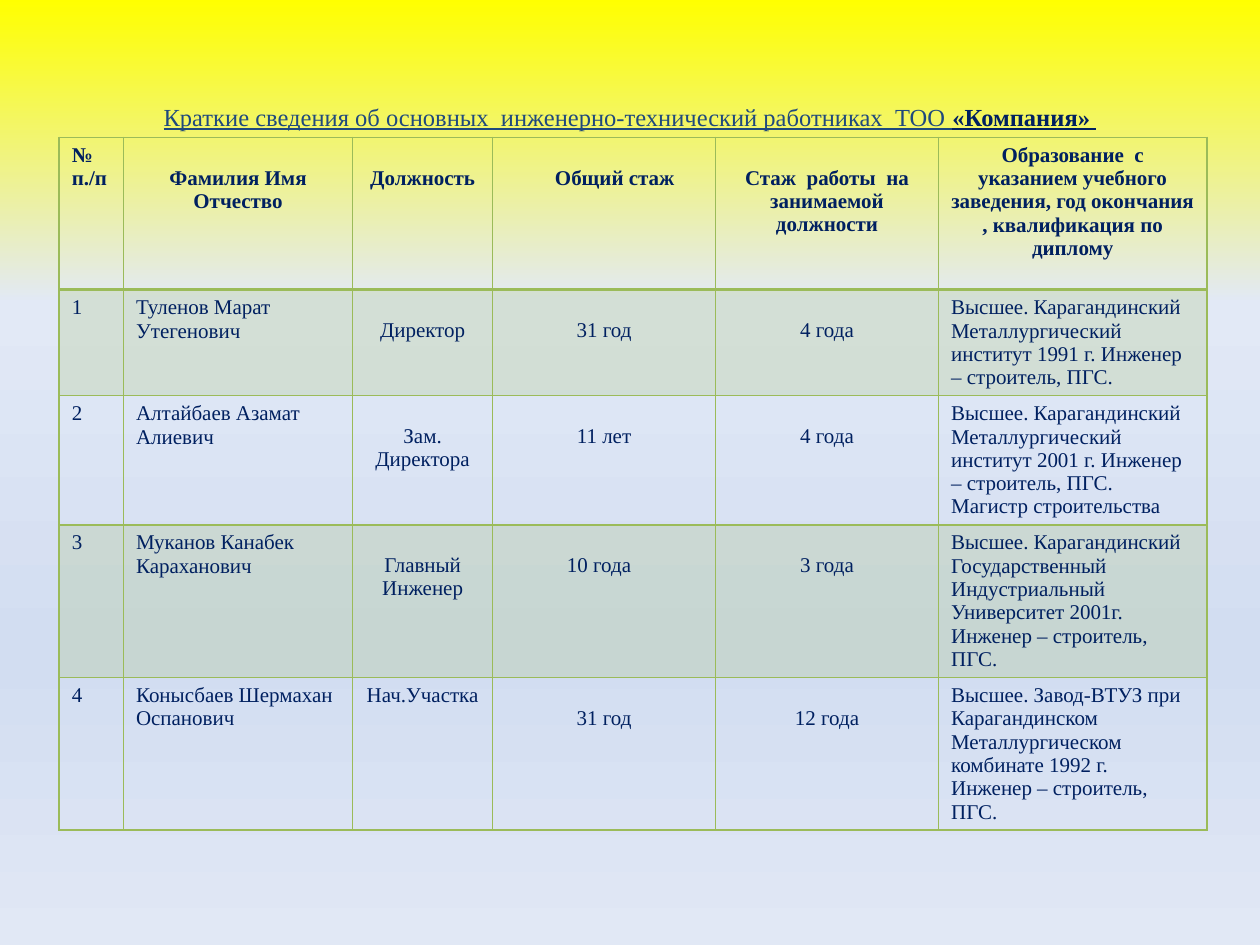
import lxml.etree
import pptx
import pptx.dml.color
import pptx.enum.text
import pptx.oxml.ns
import pptx.util

Inches = pptx.util.Inches
Pt = pptx.util.Pt
qn = pptx.oxml.ns.qn
align = pptx.enum.text.PP_ALIGN
navy, green = "002060", "9BBB59"


def paint(code):
    return pptx.dml.color.RGBColor.from_string(code)


def add(host, tag, **attrs):
    return lxml.etree.SubElement(host, qn(tag), attrs)


deck = pptx.Presentation()
deck.slide_width, deck.slide_height = Inches(10), Inches(7.5)
slide = deck.slides.add_slide(deck.slide_layouts[5])

back = slide.background.fill
back.gradient()
back.gradient_angle = 270
stops = next(slide.element.iter(qn("a:gsLst")))
for stop in list(stops):
    stops.remove(stop)
for spot, code in [(0, "FFFF00"), (32, "E2E9F6"), (69, "D2DDF1"), (100, "E1E8F5")]:
    add(add(stops, "a:gs", pos=str(spot * 1000)), "a:srgbClr", val=code)

title = slide.shapes.title
place = {"left": 0.5, "top": 0.3, "width": 9, "height": 1.25}
for name, size in place.items():
    setattr(title, name, Inches(size))
title.text_frame.vertical_anchor = pptx.enum.text.MSO_ANCHOR.MIDDLE
line = title.text_frame.paragraphs[0]
line.alignment = align.CENTER
for text, bold, code in [
    ("Краткие сведения об основных  инженерно-технический работниках  ТОО", False, "1F497D"),
    (" ", True, "1F497D"),
    ("«Компания» ", True, navy),
]:
    run = line.add_run()
    run.text = text
    form = {"name": "Times New Roman", "size": Pt(14), "bold": bold, "underline": True}
    for name, value in form.items():
        setattr(run.font, name, value)
    run.font.color.rgb = paint(code)

staff = [
    ["№ п./п", "Фамилия Имя Отчество", "Должность", "Общий стаж",
     "Стаж  работы  на занимаемой должности",
     "Образование  с указанием учебного заведения, год окончания , квалификация по диплому"],
    ["1", "Туленов Марат Утегенович", "Директор", "31 год", "4 года",
     "Высшее. Карагандинский Металлургический  институт 1991 г. Инженер – строитель, ПГС."],
    ["2", "Алтайбаев Азамат Алиевич", "Зам. Директора", "11 лет", "4 года",
     "Высшее. Карагандинский Металлургический  институт 2001 г. Инженер – строитель, ПГС. "
     "Магистр строительства"],
    ["3", "Муканов Канабек Караханович", "Главный Инженер", "10 года", "3 года",
     "Высшее. Карагандинский Государственный Индустриальный Университет 2001г.\n"
     "Инженер – строитель, ПГС."],
    ["4", "Конысбаев Шермахан Оспанович", "Нач.Участка", "31 год", "12 года",
     "Высшее. Завод-ВТУЗ при Карагандинском Металлургическом комбинате 1992 г. "
     "Инженер – строитель, ПГС."],
]
wide = [0.51, 1.82, 1.11, 1.77, 1.77, 2.13]
high = [1.21, 0.84, 1.02, 1.21, 1.21]
frame = slide.shapes.add_table(
    len(high), len(wide), Inches(0.47), Inches(1.09), Inches(sum(wide)), Inches(sum(high)))
table = frame.table
table.horz_banding = False
for col, size in zip(table.columns, wide):
    col.width = Inches(size)
for row, size in zip(table.rows, high):
    row.height = Inches(size)

for r, row in enumerate(staff):
    for c, text in enumerate(row):
        cell = table.cell(r, c)
        cell.text = text
        mid = c in (2, 3, 4) or (r == 0 and c > 0)
        low = (c in (2, 3, 4) and (r, c) != (4, 2)) or (r, c) == (0, 1)
        cell.margin_top = Inches(0.23 if low else 0.05)
        if (r, c) == (0, 3):
            cell.margin_left = Inches(0.27)
        if (r, c) == (3, 3):
            cell.margin_right = Inches(0.18)
        for para in cell.text_frame.paragraphs:
            para.alignment = align.CENTER if mid else align.LEFT
            form = {"name": "Times New Roman", "size": Pt(12), "bold": r == 0}
            for name, value in form.items():
                setattr(para.font, name, value)
            for run in para.runs:
                for name, value in form.items():
                    setattr(run.font, name, value)
                run.font.color.rgb = paint(navy)

        props = cell._tc.get_or_add_tcPr()
        for side in "LRTB":
            thick = (r, side) in ((0, "B"), (1, "T"))
            edge = add(props, "a:ln" + side, w=str(Pt(2 if thick else 1)))
            add(add(edge, "a:solidFill"), "a:srgbClr", val=green)
        if r % 2:
            cell.fill.solid()
            cell.fill.fore_color.rgb = paint(green)
            tint = props.find(qn("a:solidFill")).find(qn("a:srgbClr"))
            add(tint, "a:alpha", val="20000")
        else:
            cell.fill.background()

deck.save("out.pptx")
